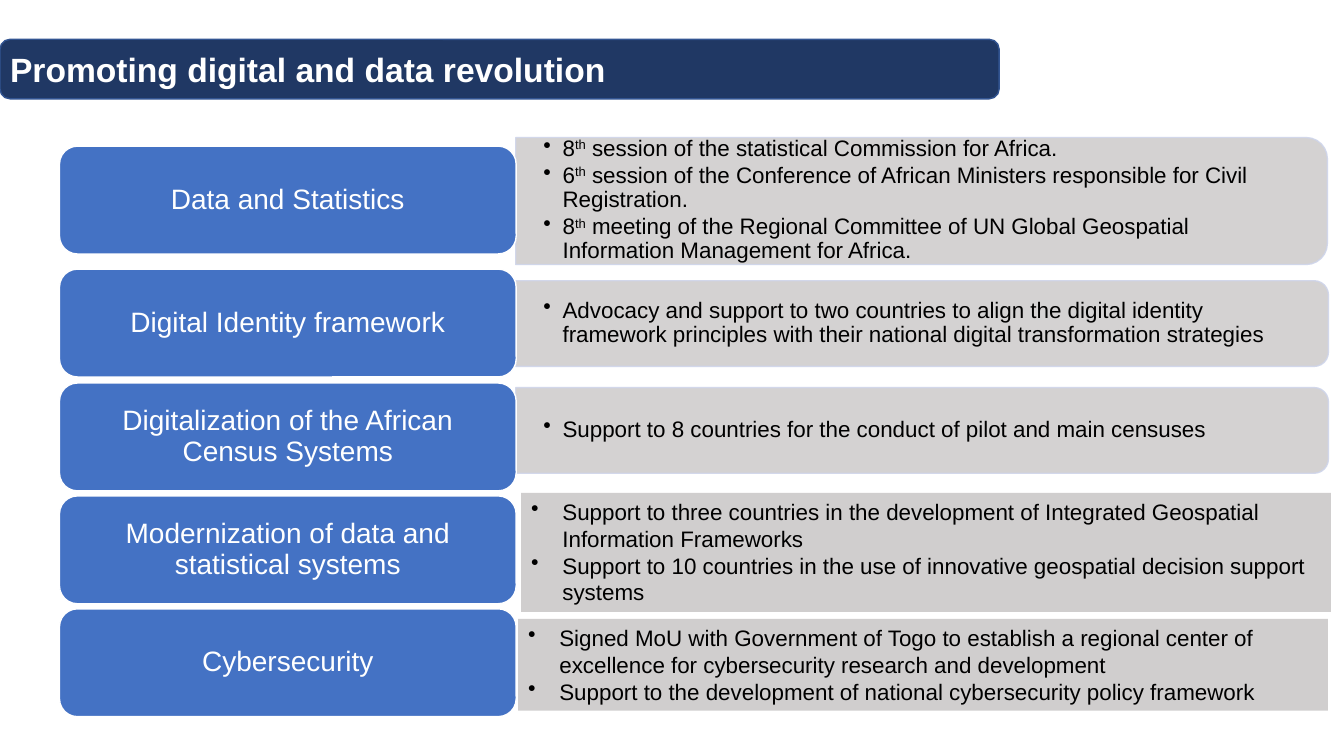
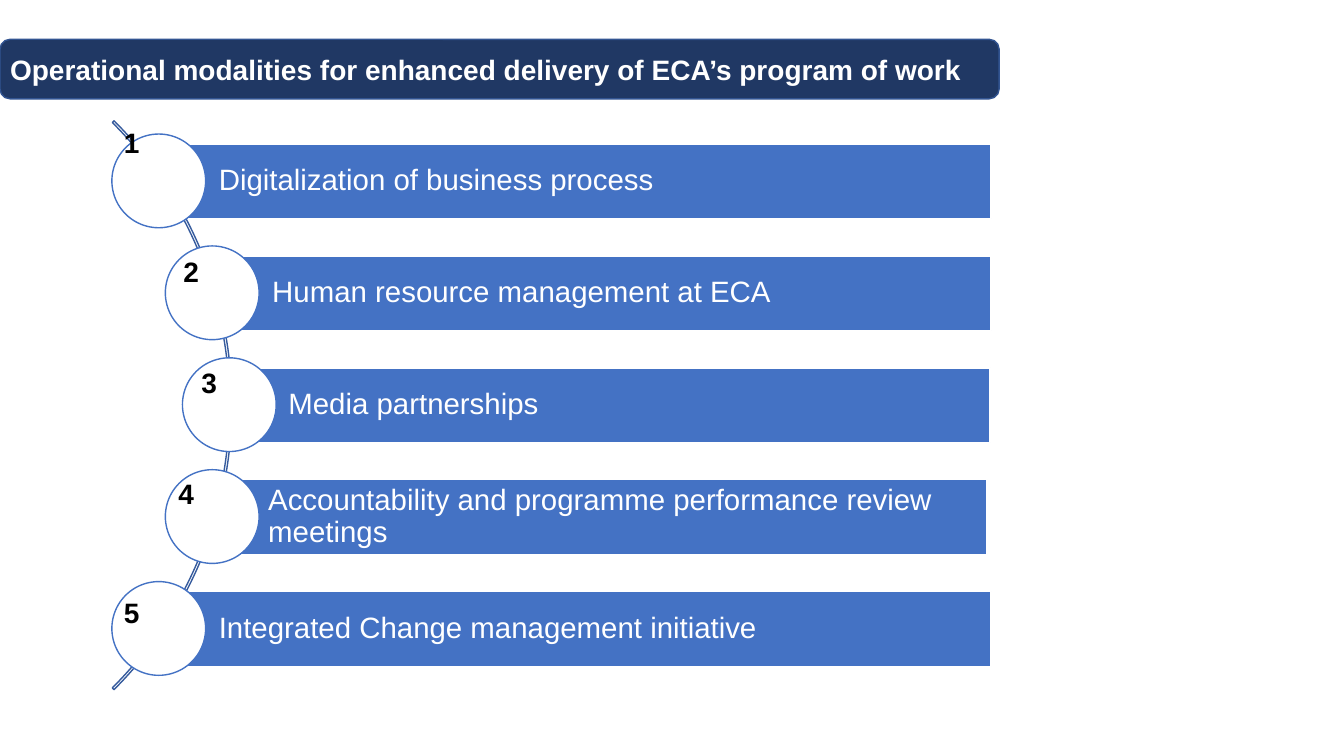
import pptx
import pptx.util
import pptx.dml.color
import pptx.enum.shapes
import pptx.enum.text
import pptx.oxml.ns
import lxml.etree

PX = 9144  # EMU per px, 100 px to the inch
FONT = "Arial"
COLORS = {
    "band": "203864",
    "band_line": "325491",
    "blue": "4472C4",
    "arc": "365B9D",
    "panel": "D0CECE",
    "panel_line": "CFD5EA",
    "white": "FFFFFF",
    "black": "000000",
}
SHAPES = pptx.enum.shapes.MSO_SHAPE
ALIGN = pptx.enum.text.PP_ALIGN
ANCHOR = pptx.enum.text.MSO_ANCHOR
qn = pptx.oxml.ns.qn


def add_box(slide, preset, box, fill=None, line=None):
    """Add a preset shape, or a text box when preset is None; box is in px."""
    box = [value * PX for value in box]
    if preset is None:
        return slide.shapes.add_textbox(*box)
    shape = slide.shapes.add_shape(preset, *box)
    shape.shadow.inherit = False
    for target, color in ((shape.fill, fill), (shape.line.fill, line)):
        if color:
            target.solid()
            target.fore_color.rgb = pptx.dml.color.RGBColor.from_string(COLORS[color])
        else:
            target.background()
    if line:
        shape.line.width = pptx.util.Pt(1)
    return shape


def write_text(shape, texts, size, color, bold=False, align=ALIGN.LEFT, anchor=ANCHOR.MIDDLE,
               insets=(10, 5, 10, 5), spacing=1.0, space_after=0, hanging=0, wrap=True):
    """Fill a shape with paragraphs; ^..^ is superscript, hanging (px) adds bullets."""
    frame = shape.text_frame
    frame.word_wrap = wrap
    frame.auto_size = pptx.enum.text.MSO_AUTO_SIZE.NONE
    frame.vertical_anchor = anchor
    (frame.margin_left, frame.margin_top,
     frame.margin_right, frame.margin_bottom) = [inset * PX for inset in insets]
    for index, text in enumerate(texts):
        paragraph = frame.add_paragraph() if index else frame.paragraphs[0]
        for part, piece in enumerate(text.split("^")):
            run = paragraph.add_run()
            run.text = piece
            if part % 2:
                run._r.get_or_add_rPr().set("baseline", "30000")
        if hanging:
            properties = paragraph._p.get_or_add_pPr()
            properties.set("marL", str(hanging * PX))
            properties.set("indent", str(-hanging * PX))
            lxml.etree.SubElement(properties, qn("a:buChar")).set("char", "•")
        paragraph.alignment = align
        paragraph.line_spacing = spacing
        paragraph.space_after = pptx.util.Pt(space_after)
        paragraph.font.name = FONT
        paragraph.font.size = pptx.util.Pt(size)
        paragraph.font.bold = bold
        paragraph.font.color.rgb = pptx.dml.color.RGBColor.from_string(COLORS[color])


presentation = pptx.Presentation()
presentation.slide_width = 1333 * PX
presentation.slide_height = 750 * PX

# Shared title band
TITLE_BOX = (0, 39, 991, 59)
slides = []
for title, size in (
    ("Promoting digital and data revolution", 24),
    ("Operational modalities for enhanced delivery of ECA’s program of work", 20),
):
    slide = presentation.slides.add_slide(presentation.slide_layouts[5])
    band = add_box(slide, SHAPES.ROUNDED_RECTANGLE, TITLE_BOX, "band", "band_line")
    placeholder = slide.shapes.title
    placeholder._element.addprevious(band._element)
    (placeholder.left, placeholder.top,
     placeholder.width, placeholder.height) = [value * PX for value in TITLE_BOX]
    write_text(placeholder, [title], size, "white", bold=True)
    slides.append(slide)
digital_slide, modalities_slide = slides

# Slide 1: themes with rounded panels, then themes with square panels
ROUNDED_THEMES = [
    ("Data and Statistics", 145, (512, 136, 805, 126), [
        "8^th^ session of the statistical Commission for Africa.",
        "6^th^ session of the Conference of African Ministers responsible for Civil Registration.",
        "8^th^ meeting of the Regional Committee of UN Global Geospatial "
        "Information Management for Africa.",
    ]),
    ("Digital Identity framework", 267, (512, 278, 806, 85), [
        "Advocacy and support to two countries to align the digital identity framework "
        "principles with their national digital transformation strategies",
    ]),
    ("Digitalization of the African Census Systems", 380, (512, 384, 806, 85), [
        "Support to 8 countries for the conduct of pilot and main censuses",
    ]),
]
SQUARE_THEMES = [
    ("Modernization of data and statistical systems", 492, (517, 489, 803, 118), [
        "Support to three countries in the development of Integrated Geospatial "
        "Information Frameworks",
        "Support to 10 countries in the use of innovative geospatial decision support systems",
    ]),
    ("Cybersecurity", 604, (514, 614, 803, 91), [
        "Signed MoU with Government of Togo to establish a regional center of excellence "
        "for cybersecurity research and development",
        "Support to the development of national cybersecurity policy framework",
    ]),
]
for label, label_top, panel_box, points in ROUNDED_THEMES:
    left, top, width, height = panel_box
    # A quarter turn puts the two rounded corners on the right
    shift = (width - height) // 2
    panel = add_box(digital_slide, SHAPES.ROUND_2_SAME_RECTANGLE,
                    (left + shift, top - shift, height, width), "panel", "panel_line")
    panel.rotation = 90
    for color in panel._element.spPr.iter(qn("a:srgbClr")):
        lxml.etree.SubElement(color, qn("a:alpha")).set("val", "90000")
    write_text(add_box(digital_slide, None, panel_box), points, 16, "black",
               insets=(27, 0, 32, 0), spacing=0.9, space_after=2, hanging=19)

for label, label_top, panel_box, points in SQUARE_THEMES:
    panel = add_box(digital_slide, SHAPES.RECTANGLE, panel_box, "panel")
    write_text(panel, points, 16, "black", anchor=ANCHOR.TOP, hanging=31)

for label, label_top, panel_box, points in ROUNDED_THEMES + SQUARE_THEMES:
    theme = add_box(digital_slide, SHAPES.ROUNDED_RECTANGLE, (59, label_top, 453, 107),
                    "blue", "white")
    write_text(theme, [label], 20, "white", align=ALIGN.CENTER,
               insets=(13, 9, 13, 9), spacing=0.9)

# Slide 2: numbered bars along an arc
arc = add_box(modalities_slide, SHAPES.BLOCK_ARC, (-568, 3, 798, 798), line="arc")
for index, value in enumerate((189, 27, 0.003)):
    arc.adjustments[index] = value

FIRST_BAR_TOP, BAR_PITCH, BAR_HEIGHT, CIRCLE = 143, 111, 74, 93
MODALITIES = [  # text, circle left, bar left, bar width, number position
    ("Digitalization of business process", 111, 158, 825, (113, 120)),
    ("Human resource management at ECA", 164, 211, 772, (172, 248)),
    ("Media partnerships", 181, 227, 755, (190, 358)),
    ("Accountability and programme performance review meetings", 164, 207, 772, (167, 468)),
    ("Integrated Change management initiative", 111, 158, 825, (113, 586)),
]
for index, (text, circle_left, bar_left, bar_width, number_at) in enumerate(MODALITIES):
    top = FIRST_BAR_TOP + index * BAR_PITCH
    bar = add_box(modalities_slide, SHAPES.RECTANGLE, (bar_left, top, bar_width, BAR_HEIGHT),
                  "blue", "white")
    write_text(bar, [text], 21, "white", insets=(59, 6, 6, 6), spacing=0.9)
    add_box(modalities_slide, SHAPES.OVAL, (circle_left, top - 10, CIRCLE, CIRCLE),
            "white", "blue")
    number = add_box(modalities_slide, None, (*number_at, 36, 44))
    write_text(number, [str(index + 1)], 20, "black", bold=True, anchor=ANCHOR.TOP, wrap=False)

presentation.save("out.pptx")
